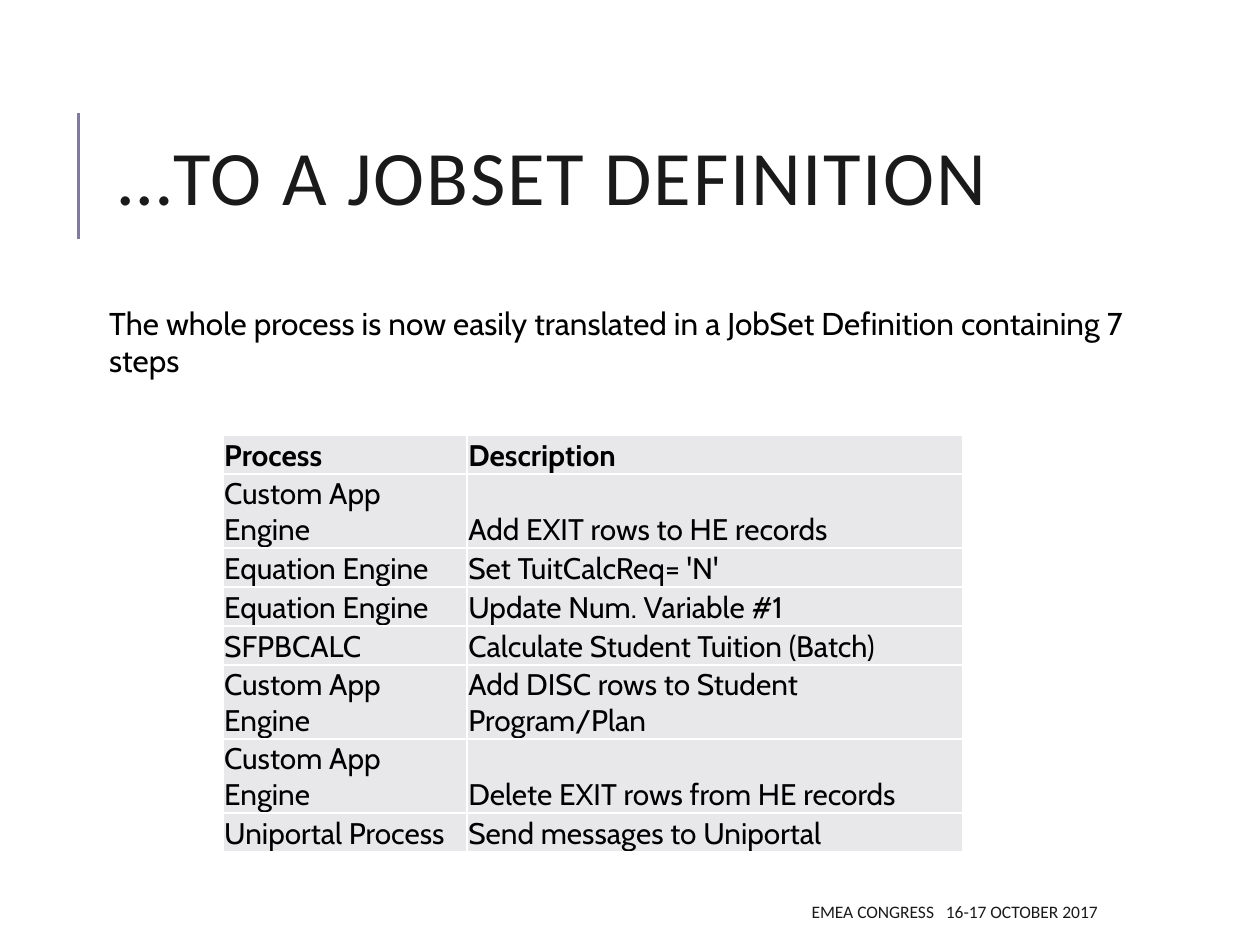
from dataclasses import dataclass

from lxml.etree import SubElement
from pptx import Presentation
from pptx.dml.color import RGBColor
from pptx.enum.shapes import MSO_CONNECTOR
from pptx.enum.text import MSO_ANCHOR, MSO_AUTO_SIZE, PP_ALIGN
from pptx.oxml.ns import qn
from pptx.util import Pt


@dataclass(frozen=True)
class Theme:
    heading_font: str = "Calibri"
    body_font: str = "Cabin"
    heading: str = "1A1A1A"
    body: str = "000000"
    accent: str = "7F7B99"
    cell: str = "E8E8EB"
    border: str = "FFFFFF"
    title_size: int = 44
    body_size: int = 18
    table_size: int = 17
    footer_size: int = 10


theme = Theme()


def write_text(paragraph, text, size, font, color, bold=False, spacing=0, align=PP_ALIGN.LEFT):
    paragraph.alignment = align
    run = paragraph.add_run()
    run.text = text
    run.font.size = Pt(size)
    run.font.name = font
    run.font.bold = bold
    run.font.color.rgb = RGBColor.from_string(color)
    if spacing:
        run.font._element.set("spc", str(round(spacing * 100)))


def set_borders(cell):
    properties = cell._tc.get_or_add_tcPr()
    for position, side in enumerate(("lnL", "lnR", "lnT", "lnB")):
        border = SubElement(properties, qn(f"a:{side}"), w=str(Pt(1)))
        fill = SubElement(border, qn("a:solidFill"))
        SubElement(fill, qn("a:srgbClr"), val=theme.border)
        properties.insert(position, border)


presentation = Presentation()
presentation.slide_width = Pt(720)
presentation.slide_height = Pt(540)
slide = presentation.slides.add_slide(presentation.slide_layouts[5])

rule = slide.shapes.add_connector(MSO_CONNECTOR.STRAIGHT, Pt(44.8), Pt(136.8), Pt(44.8), Pt(64.8))
rule.line.color.rgb = RGBColor.from_string(theme.accent)
rule.line.width = Pt(1.5)
SubElement(rule._element.spPr, qn("a:effectLst"))

title = slide.shapes.title
title.left, title.top, title.width, title.height = Pt(60.5), Pt(46), Pt(574), Pt(118)
title.text_frame.vertical_anchor = MSO_ANCHOR.MIDDLE
title.text_frame.auto_size = MSO_AUTO_SIZE.NONE
title_paragraph = title.text_frame.paragraphs[0]
title_paragraph.line_spacing = 0.8
write_text(title_paragraph, "…TO A JOBSET DEFINITION", theme.title_size,
           theme.heading_font, theme.heading, spacing=1)

steps = [
    ("Process", "Description"),
    ("Custom App Engine", "Add EXIT rows to HE records"),
    ("Equation Engine", "Set TuitCalcReq= 'N'"),
    ("Equation Engine", "Update Num. Variable #1"),
    ("SFPBCALC", "Calculate Student Tuition (Batch)"),
    ("Custom App Engine", "Add DISC rows to Student Program/Plan"),
    ("Custom App Engine", "Delete EXIT rows from HE records"),
    ("Uniportal Process", "Send messages to Uniportal"),
]
table = slide.shapes.add_table(len(steps), 2, Pt(127.4), Pt(248.6), Pt(423), Pt(178.4)).table
for column, width in zip(table.columns, (139.5, 283.5)):
    column.width = Pt(width)
for row_index, step in enumerate(steps):
    table.rows[row_index].height = Pt(22.3)
    for column_index, text in enumerate(step):
        cell = table.cell(row_index, column_index)
        cell.fill.solid()
        cell.fill.fore_color.rgb = RGBColor.from_string(theme.cell)
        cell.margin_left = cell.margin_right = cell.margin_top = Pt(0.75)
        cell.margin_bottom = Pt(0)
        cell.vertical_anchor = MSO_ANCHOR.BOTTOM
        set_borders(cell)
        write_text(cell.text_frame.paragraphs[0], text, theme.table_size,
                   theme.body_font, theme.body, bold=row_index == 0)

footer = slide.shapes.add_textbox(Pt(286), Pt(510), Pt(348.3), Pt(21.6))
footer.text_frame.word_wrap = True
footer.text_frame.vertical_anchor = MSO_ANCHOR.MIDDLE
for text, spacing in (("EMEA CONGRESS", 0), (" ", 4.5), ("16-17 OCTOBER 2017", 0)):
    write_text(footer.text_frame.paragraphs[0], text, theme.footer_size, theme.heading_font,
               theme.heading, spacing=spacing, align=PP_ALIGN.RIGHT)

introduction = slide.shapes.add_textbox(Pt(55.3), Pt(170), Pt(618.5), Pt(29))
introduction.text_frame.word_wrap = True
introduction.text_frame.auto_size = MSO_AUTO_SIZE.SHAPE_TO_FIT_TEXT
write_text(introduction.text_frame.paragraphs[0],
           "The whole process is now easily translated in a JobSet Definition containing 7 steps",
           theme.body_size, theme.body_font, theme.body)

presentation.save("out.pptx")
